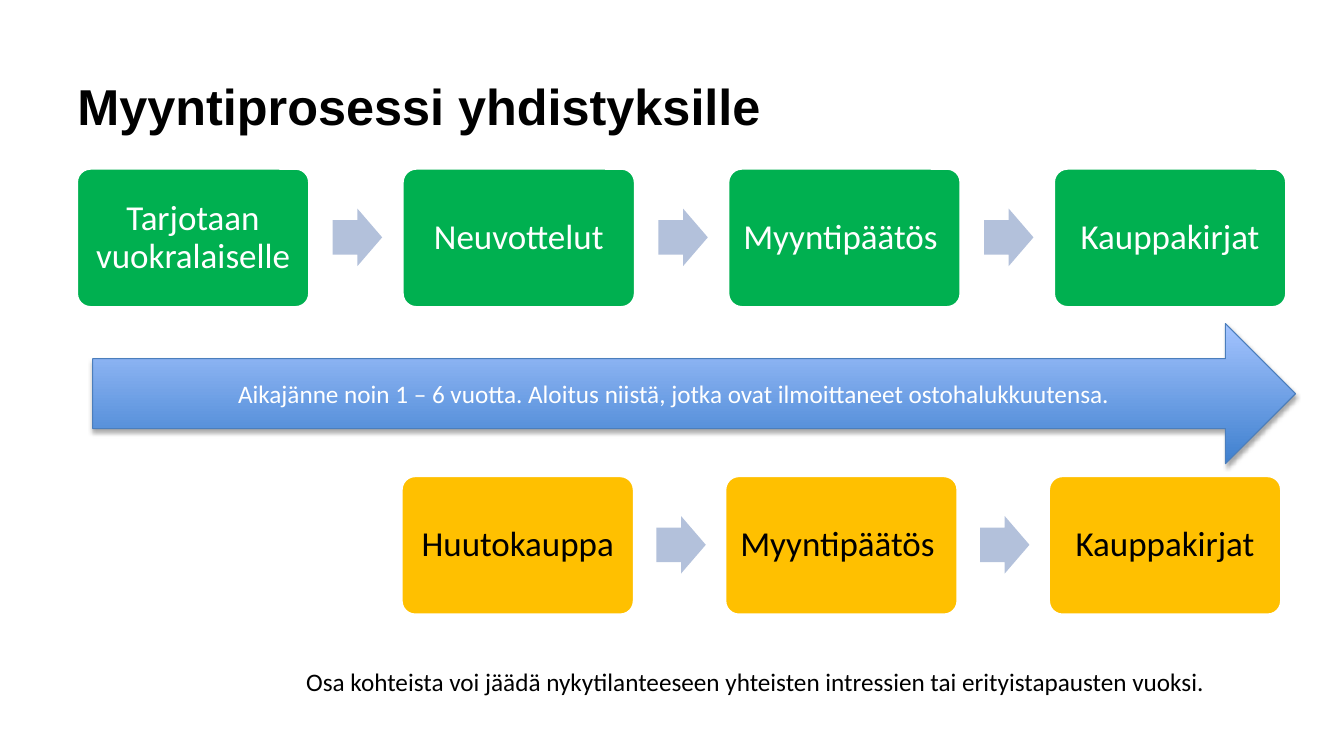
from dataclasses import dataclass

from lxml.etree import SubElement
from pptx import Presentation
from pptx.dml.color import RGBColor
from pptx.enum.shapes import MSO_SHAPE
from pptx.enum.text import MSO_ANCHOR, MSO_AUTO_SIZE, PP_ALIGN
from pptx.oxml.ns import qn
from pptx.shapes.autoshape import Shape
from pptx.slide import Slide
from pptx.util import Emu, Pt

EMU_PER_PX = 9144
COLOURS = {
    "black": "000000",
    "white": "FFFFFF",
    "green": "00B050",
    "amber": "FFC000",
    "step_arrow": "B3C1DB",
    "timeline_bottom": "3F80CE",
    "timeline_top": "A4C4FF",
    "timeline_edge": "4B7EBC",
}
STEP_WIDTH, STEP_HEIGHT = 231, 138
ARROW_WIDTH, ARROW_HEIGHT = 49, 57


@dataclass(frozen=True)
class Area:
    left: int
    top: int
    width: int
    height: int


@dataclass(frozen=True)
class ProcessRow:
    left: int
    top: int
    pitch: int
    arrow_shift: int
    fill: str
    text_colour: str
    steps: tuple[str, ...]


ROWS = (
    ProcessRow(76, 167, 323, 254, "green", "white",
               ("Tarjotaan vuokralaiselle", "Neuvottelut", "Myyntipäätös ", "Kauppakirjat")),
    ProcessRow(398, 472, 321, 253, "amber", "black",
               ("Huutokauppa", "Myyntipäätös ", "Kauppakirjat")),
)


def px(value: int) -> Emu:
    return Emu(value * EMU_PER_PX)


def rgb(name: str) -> RGBColor:
    return RGBColor.from_string(COLOURS[name])


def place(area: Area) -> tuple[Emu, Emu, Emu, Emu]:
    return px(area.left), px(area.top), px(area.width), px(area.height)


def write(box: Shape, text: str, size: int, colour: str, font: str = "Calibri",
          align: PP_ALIGN = PP_ALIGN.CENTER, bold: bool = False) -> None:
    frame = box.text_frame
    frame.word_wrap = True
    frame.vertical_anchor = MSO_ANCHOR.MIDDLE
    frame.text = text
    para = frame.paragraphs[0]
    para.alignment = align
    span = para.runs[0]
    span.font.name = font
    span.font.size = Pt(size)
    span.font.bold = bold
    span.font.color.rgb = rgb(colour)


def add_preset(page: Slide, preset: MSO_SHAPE, area: Area) -> Shape:
    shape = page.shapes.add_shape(preset, *place(area))
    shape.shadow.inherit = False
    return shape


def add_step(page: Slide, area: Area, text: str, row: ProcessRow) -> None:
    step = add_preset(page, MSO_SHAPE.ROUNDED_RECTANGLE, area)
    step.adjustments[0] = 0.1
    step.fill.solid()
    step.fill.fore_color.rgb = rgb(row.fill)
    step.line.color.rgb = rgb("white")
    step.line.width = Pt(2)
    write(step, text, 25, row.text_colour)
    frame = step.text_frame
    frame.margin_left = frame.margin_right = px(10)
    frame.margin_top = frame.margin_bottom = px(10)
    frame.paragraphs[0].line_spacing = 0.9


def add_step_arrow(page: Slide, area: Area) -> None:
    arrow = add_preset(page, MSO_SHAPE.RIGHT_ARROW, area)
    arrow.adjustments[0] = 0.6
    arrow.adjustments[1] = 0.5
    arrow.fill.solid()
    arrow.fill.fore_color.rgb = rgb("step_arrow")
    arrow.line.fill.background()


def add_row(page: Slide, row: ProcessRow) -> None:
    arrow_top = row.top + (STEP_HEIGHT - ARROW_HEIGHT) // 2
    for index, text in enumerate(row.steps):
        left = row.left + index * row.pitch
        add_step(page, Area(left, row.top, STEP_WIDTH, STEP_HEIGHT), text, row)
        if index < len(row.steps) - 1:
            add_step_arrow(page, Area(left + row.arrow_shift, arrow_top, ARROW_WIDTH, ARROW_HEIGHT))


def add_drop_shadow(shape: Shape) -> None:
    effects = shape._element.spPr.find(qn("a:effectLst"))
    shadow = SubElement(effects, qn("a:outerShdw"), blurRad=str(Pt(3.1)), dist=str(Pt(1.8)),
                        dir="5400000", rotWithShape="0")
    colour = SubElement(shadow, qn("a:srgbClr"), val=COLOURS["black"])
    SubElement(colour, qn("a:alpha"), val="35000")


def add_timeline(page: Slide, area: Area, text: str) -> None:
    timeline = add_preset(page, MSO_SHAPE.RIGHT_ARROW, area)
    timeline.fill.gradient()
    timeline.fill.gradient_angle = 90
    for stop, name in zip(timeline.fill.gradient_stops, ("timeline_bottom", "timeline_top")):
        stop.color.rgb = rgb(name)
    timeline.line.color.rgb = rgb("timeline_edge")
    timeline.line.width = Pt(0.75)
    add_drop_shadow(timeline)
    write(timeline, text, 18, "white")


def main() -> None:
    deck = Presentation()
    deck.slide_width, deck.slide_height = px(1333), px(750)
    page = deck.slides.add_slide(deck.slide_layouts[6])

    title = page.shapes.add_textbox(*place(Area(67, 54, 1200, 101)))
    write(title, "Myyntiprosessi yhdistyksille", 36, "black", "Arial", PP_ALIGN.LEFT, True)

    for row in ROWS:
        add_row(page, row)

    add_timeline(page, Area(92, 321, 1193, 139),
                 "Aikajänne noin 1 – 6 vuotta. Aloitus niistä, jotka ovat ilmoittaneet ostohalukkuutensa. ")

    remark = page.shapes.add_textbox(*place(Area(232, 656, 1034, 40)))
    write(remark, "Osa kohteista voi jäädä nykytilanteeseen yhteisten intressien tai "
                  "erityistapausten vuoksi.", 18, "black")
    remark.text_frame.vertical_anchor = MSO_ANCHOR.TOP
    remark.text_frame.auto_size = MSO_AUTO_SIZE.SHAPE_TO_FIT_TEXT

    deck.save("out.pptx")


if __name__ == "__main__":
    main()
